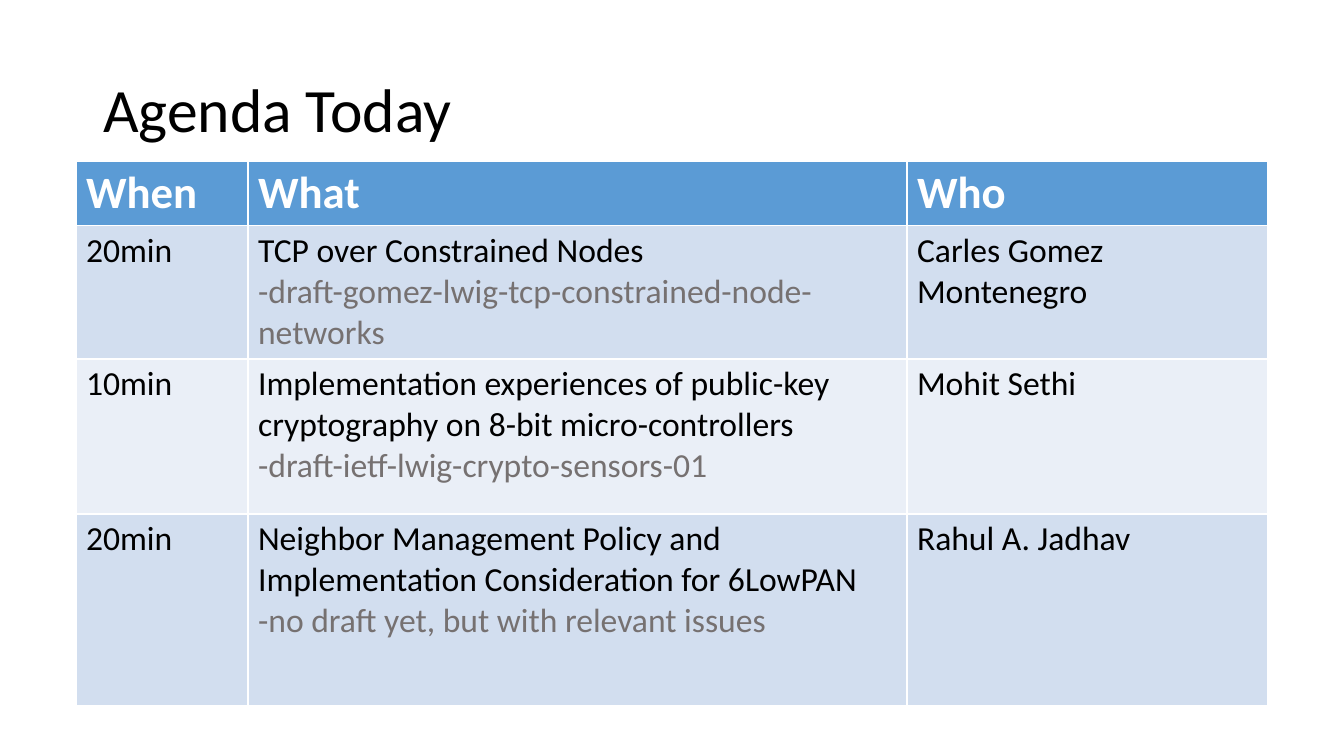
"""Build the agenda slide: a title above a three-column timetable."""
from pptx import Presentation
from pptx import util as u
from pptx.dml.color import RGBColor
from pptx.enum import text

PX = 914400 / 100.8
THEME = {
    "font": "Calibri",
    "title": {"size": 44, "color": "000000", "bold": False},
    "head": {"size": 32, "color": "FFFFFF", "bold": True},
    "body": {"size": 24, "color": "000000", "bold": False},
    "note": {"size": 24, "color": "767171", "bold": False},
    "fills": ["5B9BD5", "D2DEEF", "EAEFF7", "D2DEEF"],
}
COLS = [172, 659, 361]
ROWS = [64, 133, 155, 192]
AGENDA = [
    ("When", "What", "Who"),
    ("20min",
     "TCP over Constrained Nodes\n-draft-gomez-lwig-tcp-constrained-node-networks",
     "Carles Gomez Montenegro"),
    ("10min",
     "Implementation experiences of public-key cryptography on 8-bit micro-controllers\n"
     "-draft-ietf-lwig-crypto-sensors-01",
     "Mohit Sethi"),
    ("20min",
     "Neighbor Management Policy and Implementation Consideration for 6LowPAN\n"
     "-no draft yet, but with relevant issues",
     "Rahul A. Jadhav"),
]


def px(n):
    return u.Emu(round(n * PX))


def style(para, kind):
    look = THEME[kind]
    para.alignment = text.PP_ALIGN.LEFT
    for run in para.runs:
        run.font.color.rgb = RGBColor.from_string(look["color"])
        form = {"name": THEME["font"], "size": u.Pt(look["size"]), "bold": look["bold"]}
        for key, val in form.items():
            setattr(run.font, key, val)


deck = Presentation()
deck.slide_width, deck.slide_height = px(1344), px(756)
slide = deck.slides.add_slide(deck.slide_layouts[5])

title = slide.shapes.title
place = {"left": 93, "top": 40, "width": 1159, "height": 146}
for key, val in place.items():
    setattr(title, key, px(val))
frame = title.text_frame
frame.text = "Agenda Today"
frame.vertical_anchor = text.MSO_ANCHOR.MIDDLE
frame.paragraphs[0].line_spacing = 0.9
style(frame.paragraphs[0], "title")

table = slide.shapes.add_table(
    len(ROWS), len(COLS), px(76), px(161), px(sum(COLS)), px(sum(ROWS))).table
for col, width in zip(table.columns, COLS):
    col.width = px(width)
for i, (row, height, items) in enumerate(zip(table.rows, ROWS, AGENDA)):
    row.height = px(height)
    for cell, item in zip(row.cells, items):
        cell.text = item
        cell.fill.solid()
        cell.fill.fore_color.rgb = RGBColor.from_string(THEME["fills"][i])
        for j, para in enumerate(cell.text_frame.paragraphs):
            style(para, "head" if i == 0 else "note" if j else "body")

deck.save("out.pptx")
